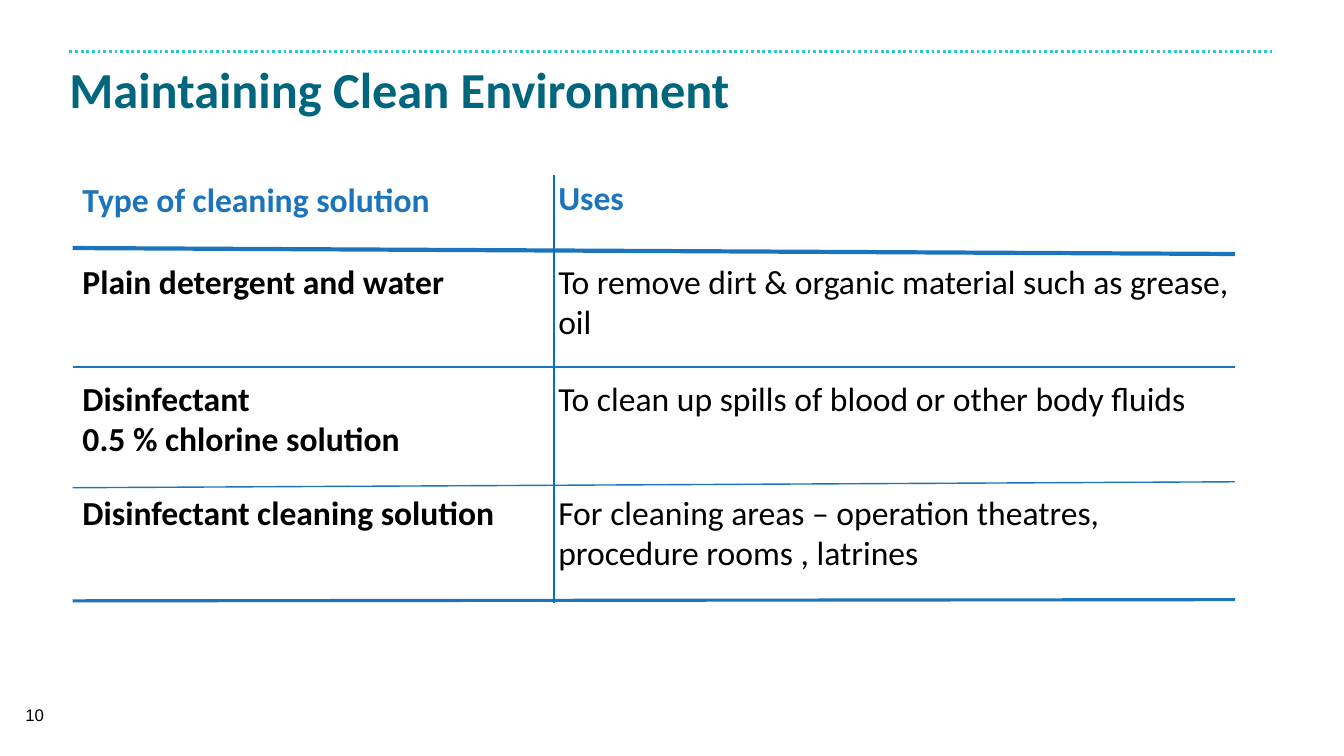
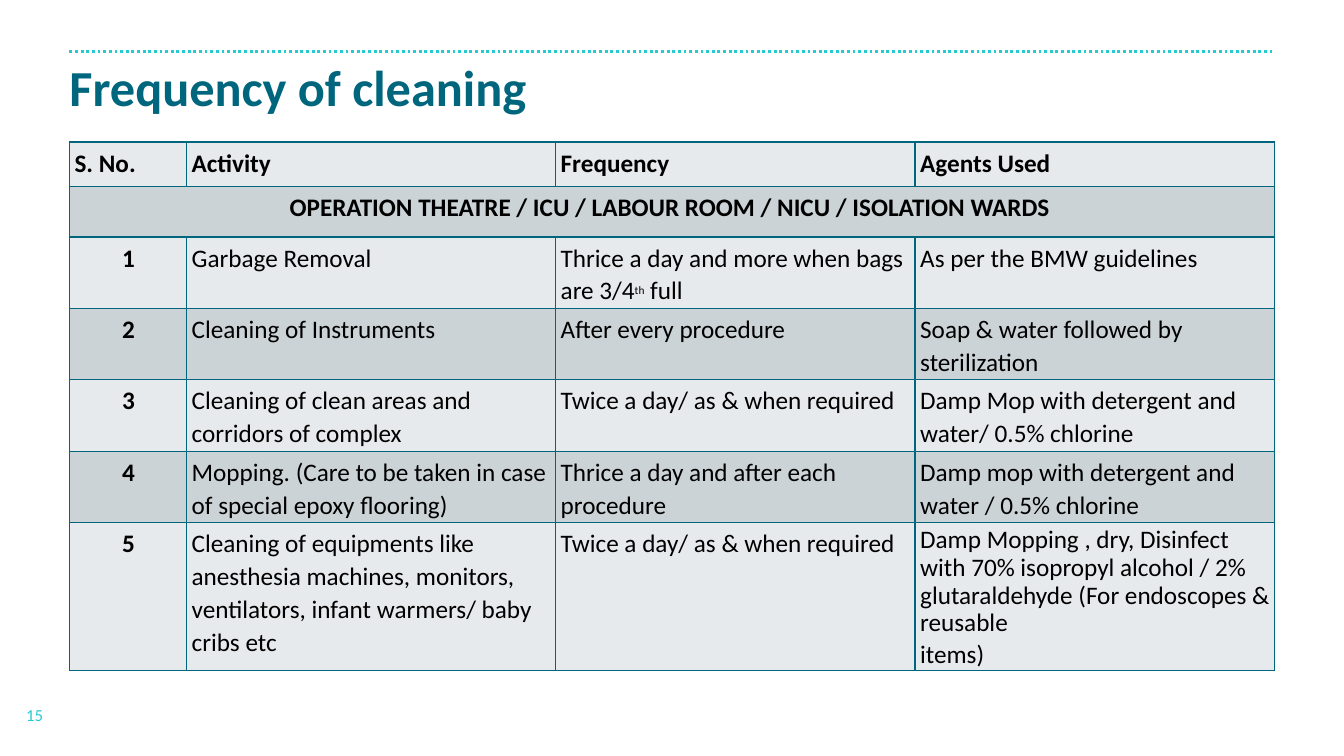
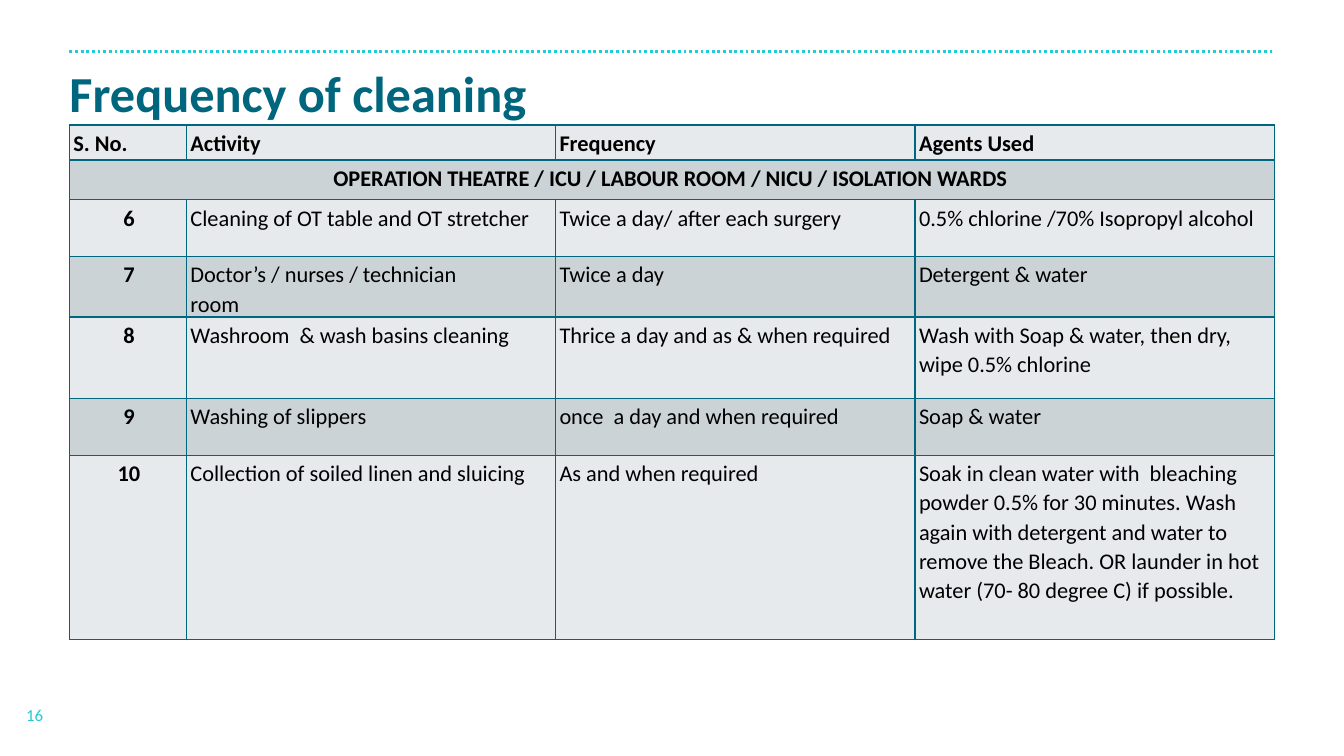
from lxml import etree
from pptx import Presentation
from pptx.dml.color import RGBColor
from pptx.enum.dml import MSO_LINE
from pptx.enum.shapes import MSO_CONNECTOR
from pptx.enum.text import MSO_ANCHOR as Anchor, MSO_AUTO_SIZE as AutoSize, PP_ALIGN as Align
from pptx.oxml import parse_xml
from pptx.oxml.ns import nsdecls, qn
from pptx.util import Cm, Pt

TEAL = RGBColor(0x00, 0x66, 0x7D)
AQUA = RGBColor(0x26, 0xCA, 0xD3)
BLUE = RGBColor(0x1C, 0x75, 0xBC)
DIVIDER_BLUE = RGBColor(0x00, 0x70, 0xC0)
BLACK = RGBColor(0x00, 0x00, 0x00)
PALE_GREY = RGBColor(0xE7, 0xEA, 0xEC)
MID_GREY = RGBColor(0xCC, 0xD3, 0xD7)

FONT = "Calibri"
LEFT, CONTENT_WIDTH = 1.75, 30.37
TITLE_FORMAT = dict(name=FONT, size=Pt(36), bold=True)
GRID_FORMAT = dict(name=FONT, size=Pt(24))
COLUMN_WIDTHS = [2.95, 9.3, 9.06, 9.06]
TABLE_HEADER = ["S. No.", "Activity", "Frequency", "Agents Used"]
WARDS = "OPERATION THEATRE / ICU / LABOUR ROOM / NICU / ISOLATION WARDS "

USES_HEADER = ("Type of cleaning solution", "Uses")
USES = [
    (2.03, "Plain detergent and water",
     "To remove dirt & organic material such as grease, oil"),
    (4.98, "Disinfectant\n0.5 % chlorine solution",
     "To clean up spills of blood or other body fluids"),
    (7.85, "Disinfectant cleaning solution",
     "For cleaning areas – operation theatres, procedure rooms , latrines"),
]
# Height at the left end, height at the right end, line width
USES_RULES = [(1.83, 1.98, 3), (4.83, 4.83, 1), (7.87, 7.72, 1), (10.72, 10.69, 2.25)]

# Text between carets is superscript
DAILY_TASKS = [
    ["1", "Garbage Removal",
     "Thrice a day and more when bags are 3/4^th^ full", "As per the BMW guidelines"],
    ["2", "Cleaning of Instruments", "After every procedure",
     "Soap & water followed by sterilization"],
    ["3", "Cleaning of clean areas and corridors of complex",
     "Twice a day/ as & when required",
     "Damp Mop with detergent and water/ 0.5% chlorine"],
    ["4", "Mopping. (Care to be taken in case of special epoxy flooring)",
     "Thrice a day and after each procedure",
     "Damp mop with detergent and water / 0.5% chlorine"],
    ["5", "Cleaning of equipments like anesthesia machines, monitors, "
     "ventilators, infant warmers/ baby cribs etc",
     "Twice a day/ as & when required",
     "Damp Mopping , dry, Disinfect with 70% isopropyl alcohol / 2% "
     "glutaraldehyde (For endoscopes & reusable\nitems)"],
]
ROOM_TASKS = [
    ["6", "Cleaning of OT table and OT stretcher", "Twice a day/ after each surgery",
     "0.5% chlorine /70% Isopropyl alcohol"],
    ["7", "Doctor’s / nurses / technician\nroom", "Twice a day", "Detergent & water"],
    ["8", "Washroom  & wash basins cleaning", "Thrice a day and as & when required",
     "Wash with Soap & water, then dry, wipe 0.5% chlorine"],
    ["9", "Washing of slippers", "once  a day and when required", "Soap & water"],
    ["10", "Collection of soiled linen and sluicing", "As and when required",
     "Soak in clean water with  bleaching powder 0.5% for 30 minutes. Wash again "
     "with detergent and water to remove the Bleach. OR launder in hot water "
     "(70- 80 degree C) if possible."],
]


def apply_format(font, color, values):
    for name, value in values.items():
        setattr(font, name, value)
    font.color.rgb = color


def write_text(frame, text, color, values, align=Align.LEFT, spacing=1.0):
    """Write one paragraph per line, with caret-marked parts as superscript."""
    for index, line in enumerate(text.split("\n")):
        paragraph = frame.add_paragraph() if index else frame.paragraphs[0]
        paragraph.alignment = align
        paragraph.line_spacing = spacing
        for part_index, part in enumerate(line.split("^")):
            run = paragraph.add_run()
            run.text = part
            apply_format(run.font, color, values)
            if part_index % 2:
                run.font.size = Pt(14)
                run._r.get_or_add_rPr().set("baseline", "30000")


def add_text(slide, box, text, color, values, **paragraph_values):
    frame = slide.shapes.add_textbox(*map(Cm, box)).text_frame
    frame.word_wrap = True
    write_text(frame, text, color, values, **paragraph_values)
    return frame


def add_line(slide, start, end, color, width):
    line = slide.shapes.add_connector(MSO_CONNECTOR.STRAIGHT, *map(Cm, start + end))
    line.line.color.rgb = color
    line.line.width = Pt(width)
    etree.SubElement(line.element.spPr, qn("a:effectLst"))
    return line


def add_layout_rule(slide):
    """Put the dotted rule on the layout that all slides share."""
    rule = add_line(slide, (LEFT, 1.3), (LEFT + CONTENT_WIDTH, 1.3), AQUA, 2)
    rule.line.dash_style = MSO_LINE.ROUND_DOT
    slide.slide_layout.shapes.element.append(rule.element)


def start_slide(presentation, title, title_top, number, number_color=AQUA, number_font=FONT):
    slide = presentation.slides.add_slide(presentation.slide_layouts[5])
    shape = slide.shapes.title
    shape.left, shape.top = Cm(LEFT), Cm(title_top)
    shape.width, shape.height = Cm(CONTENT_WIDTH), Cm(1.52)
    frame = shape.text_frame
    frame.auto_size = AutoSize.NONE
    frame.vertical_anchor = Anchor.TOP
    frame.margin_left = frame.margin_right = 0
    write_text(frame, title, TEAL, TITLE_FORMAT, spacing=0.9)
    number_frame = add_text(slide, (0, 17.5, 1.75, 1.02), number, number_color,
                            dict(name=number_font, size=Pt(12)), align=Align.CENTER)
    number_frame.vertical_anchor = Anchor.MIDDLE
    return slide


def add_uses_grid(slide, left, top, width):
    term_width, use_offset, divider_offset = 11.84, 11.99, 12.14
    use_left, use_width = left + use_offset, width - use_offset + 0.18
    bold = dict(GRID_FORMAT, bold=True)
    term_title, use_title = USES_HEADER
    add_text(slide, (left, top + 0.15, term_width, 1.52), term_title, BLUE, bold, spacing=0.8)
    add_text(slide, (use_left, top - 0.08, term_width, 1.3), use_title, BLUE, bold)
    for offset, term, use in USES:
        add_text(slide, (left, top + offset, term_width, 2.1), term, BLACK, bold)
        add_text(slide, (use_left, top + offset, use_width, 2.1), use, BLACK, GRID_FORMAT)
    for start, end, line_width in USES_RULES:
        add_line(slide, (left, top + start), (left + width, top + end), BLUE, line_width)
    divider = left + divider_offset
    add_line(slide, (divider, top), (divider, top + 10.77), DIVIDER_BLUE, 1.5)


def set_borders(cell, color, width):
    properties = cell._tc.get_or_add_tcPr()
    for index, side in enumerate(("lnL", "lnR", "lnT", "lnB")):
        properties.insert(index, parse_xml(
            f'<a:{side} {nsdecls("a")} w="{Pt(width)}"><a:solidFill>'
            f'<a:srgbClr val="{color}"/></a:solidFill></a:{side}>'))


def add_frequency_table(slide, top, row_heights, tasks, size, margins):
    rows = [TABLE_HEADER, [WARDS, "", "", ""]] + tasks
    table = slide.shapes.add_table(
        len(rows), len(COLUMN_WIDTHS), Cm(LEFT), Cm(top),
        Cm(CONTENT_WIDTH), Cm(sum(row_heights))).table
    table.first_row = table.horz_banding = False
    for column, width in zip(table.columns, COLUMN_WIDTHS):
        column.width = Cm(width)
    for row, height in zip(table.rows, row_heights):
        row.height = Cm(height)
    table.cell(1, 0).merge(table.cell(1, 3))
    for row_index, texts in enumerate(rows):
        for column_index, text in enumerate(texts):
            cell = table.cell(row_index, column_index)
            cell.fill.solid()
            cell.fill.fore_color.rgb = MID_GREY if row_index % 2 else PALE_GREY
            set_borders(cell, TEAL, 1)
            for side, margin in margins.items():
                setattr(cell, f"margin_{side}", Cm(margin))
            if text:
                centred = row_index > 0 and column_index == 0
                values = dict(name=FONT, size=Pt(size), bold=row_index == 0 or centred)
                write_text(cell.text_frame, text, BLACK, values,
                           Align.CENTER if centred else Align.LEFT, 1.07)
    return table


def main():
    presentation = Presentation()
    presentation.slide_width, presentation.slide_height = Cm(33.87), Cm(19.05)

    slide = start_slide(presentation, "Maintaining Clean Environment", 1.52, "10", BLACK, "Arial")
    add_layout_rule(slide)
    add_uses_grid(slide, left=1.83, top=4.42, width=29.29)

    slide = start_slide(presentation, "Frequency of cleaning", 1.45, "15")
    table = add_frequency_table(
        slide, 3.58, [1.12, 1.27] + [1.8] * 4 + [3.72], DAILY_TASKS, 18,
        dict(left=0.13, top=0.1, right=0.1, bottom=0))
    table.cell(6, 3).text_frame.paragraphs[0].line_spacing = 0.9

    slide = start_slide(presentation, "Frequency of cleaning", 1.6, "16")
    add_frequency_table(
        slide, 3.15, [0.88, 1.0, 1.43, 1.53, 2.05, 1.43, 4.65], ROOM_TASKS, 16,
        dict(left=0.1, top=0.08, right=0.05, bottom=0))

    presentation.save("out.pptx")


if __name__ == "__main__":
    main()
